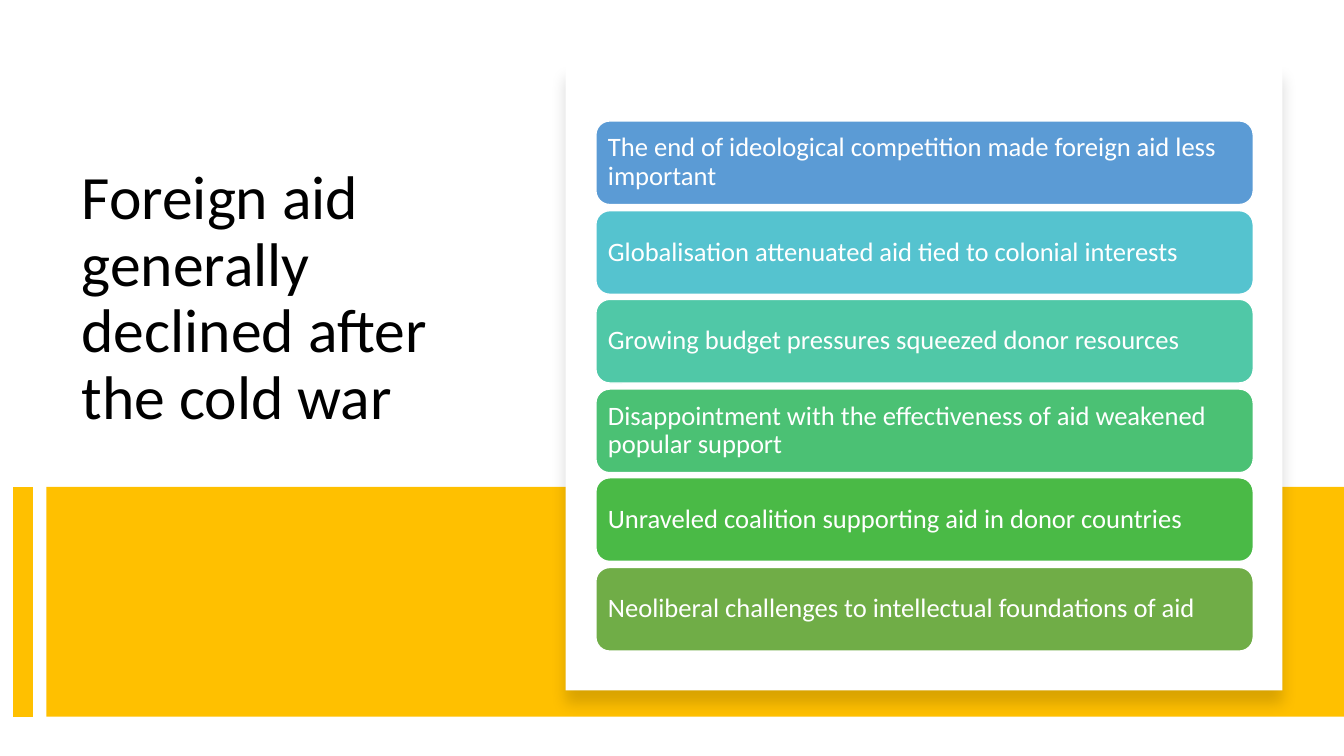
import lxml.etree
import pptx
import pptx.dml.color
import pptx.enum.shapes
import pptx.enum.text
import pptx.oxml.ns
import pptx.util

RGB = pptx.dml.color.RGBColor
SHAPE = pptx.enum.shapes.MSO_SHAPE
ANCHOR = pptx.enum.text.MSO_ANCHOR
ALIGN = pptx.enum.text.PP_ALIGN
qn = pptx.oxml.ns.qn

BLACK = RGB(0x00, 0x00, 0x00)
WHITE = RGB(0xFF, 0xFF, 0xFF)
GOLD = RGB(0xFF, 0xC0, 0x00)
BLUE = RGB(0x5B, 0x9B, 0xD5)
AQUA = RGB(0x55, 0xC3, 0xCF)
TEAL = RGB(0x50, 0xC8, 0xA7)
MINT = RGB(0x4B, 0xC1, 0x74)
GREEN = RGB(0x4A, 0xBA, 0x46)
OLIVE = RGB(0x70, 0xAD, 0x47)

REASONS = [
    ("The end of ideological competition made foreign aid less important", BLUE),
    ("Globalisation attenuated aid tied to colonial interests", AQUA),
    ("Growing budget pressures squeezed donor resources", TEAL),
    ("Disappointment with the effectiveness of aid weakened popular support", MINT),
    ("Unraveled coalition supporting aid in donor countries", GREEN),
    ("Neoliberal challenges to intellectual foundations of aid", OLIVE),
]
TOP, PITCH = 120, 88.6


def px(value):
    """Turn px, 100 to the inch, into EMU."""
    return pptx.util.Emu(value * 9144)


def write(shape, text, size, color, anchor=ANCHOR.TOP, inset=None):
    frame = shape.text_frame
    frame.word_wrap = True
    frame.auto_size = pptx.enum.text.MSO_AUTO_SIZE.NONE
    frame.vertical_anchor = anchor
    if inset is not None:
        frame.margin_left = frame.margin_right = px(inset)
        frame.margin_top = frame.margin_bottom = px(inset)
    para = frame.paragraphs[0]
    para.alignment = ALIGN.LEFT
    para.line_spacing = 0.9
    run = para.add_run()
    run.text = text
    run.font.name = "Calibri"
    run.font.size = pptx.util.Pt(size)
    run.font.color.rgb = color


class Deck:
    font_size = 19
    title_size = 44

    def __init__(self, wide, high):
        self.prs = pptx.Presentation()
        self.prs.slide_width, self.prs.slide_height = px(wide), px(high)
        self.slide = self.prs.slides.add_slide(self.prs.slide_layouts[5])

    def title(self, text, *box):
        title = self.slide.shapes.title
        title.left, title.top, title.width, title.height = map(px, box)
        write(title, text, self.title_size, BLACK)

    def block(self, kind, fill, *box, line=None):
        shape = self.slide.shapes.add_shape(kind, *map(px, box))
        shape.shadow.inherit = False
        shape.fill.solid()
        shape.fill.fore_color.rgb = fill
        if line is None:
            shape.line.fill.background()
        else:
            shape.line.color.rgb = line
            shape.line.width = pptx.util.Pt(1)
        return shape

    def stripe(self, color, weight, *ends):
        kind = pptx.enum.shapes.MSO_CONNECTOR.STRAIGHT
        line = self.slide.shapes.add_connector(kind, *map(px, ends))
        line.line.color.rgb = color
        line.line.width = pptx.util.Pt(weight)
        lxml.etree.SubElement(line._element.spPr, qn("a:effectLst"))

    def panel(self, *box):
        """Add a white card with a soft shadow below it."""
        card = self.block(SHAPE.RECTANGLE, WHITE, *box)
        effects = card._element.spPr.find(qn("a:effectLst"))
        shadow = lxml.etree.SubElement(
            effects, qn("a:outerShdw"), blurRad=str(pptx.util.Pt(11)),
            dist=str(pptx.util.Pt(10)), dir="5400000", algn="t", rotWithShape="0")
        color = lxml.etree.SubElement(shadow, qn("a:srgbClr"), val=str(BLACK))
        lxml.etree.SubElement(color, qn("a:alpha"), val="15000")

    def reason(self, text, fill, *box):
        bar = self.block(SHAPE.ROUNDED_RECTANGLE, fill, *box, line=WHITE)
        write(bar, text, self.font_size, WHITE, anchor=ANCHOR.MIDDLE, inset=8)


def main():
    deck = Deck(1333, 750)
    deck.title("Foreign aid generally declined after the cold war",
               71, 160, 415, 294)
    deck.block(SHAPE.RECTANGLE, GOLD, 46, 483, 1287, 228)
    deck.stripe(GOLD, 14, 23, 483, 23, 711)
    deck.panel(561, 64, 711, 621)
    for row, (text, fill) in enumerate(REASONS):
        deck.reason(text, fill, 591, TOP + round(row * PITCH), 652, 83)
    deck.prs.save("out.pptx")


if __name__ == "__main__":
    main()
